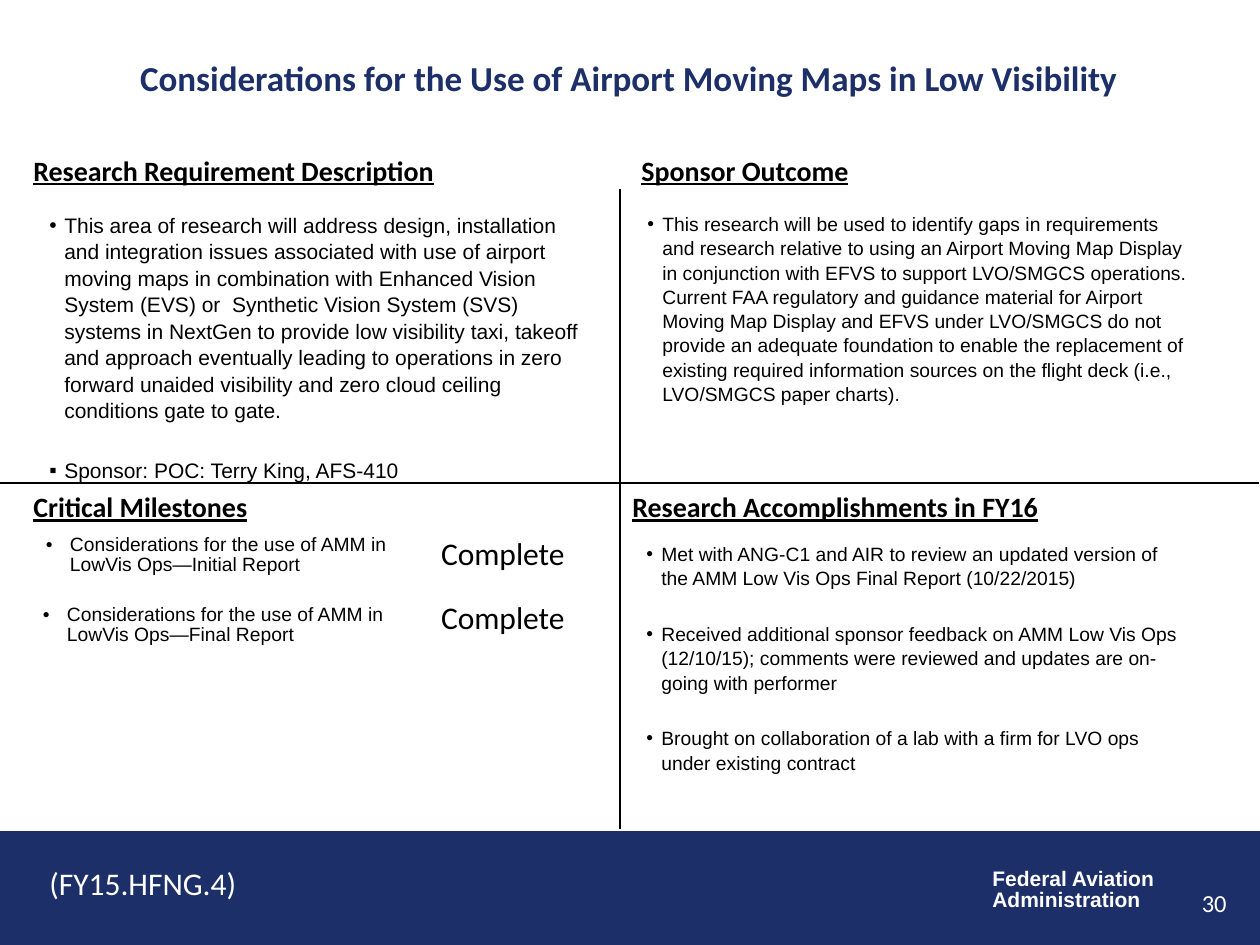
from dataclasses import dataclass
from typing import Optional

from lxml.etree import SubElement as Sub
from pptx import Presentation
from pptx.dml.color import RGBColor as Color
from pptx.enum.shapes import MSO_CONNECTOR as Link, MSO_SHAPE as Form
from pptx.enum.text import MSO_ANCHOR as Anchor, PP_ALIGN as Align
from pptx.oxml.ns import qn
from pptx.util import Emu, Pt

NAVY = Color(0x1D, 0x2F, 0x68)
BLACK = Color(0, 0, 0)
WHITE = Color(255, 255, 255)
SCALE = 914400 / 126


def px(n: int) -> Emu:
    return Emu(round(n * SCALE))


@dataclass
class Look:
    size: int
    face: str = "Arial"
    color: Color = BLACK
    bold: bool = False
    under: bool = False
    align: Align = Align.LEFT
    lead: Optional[float] = None
    gap: int = 0


@dataclass
class Box:
    x: int
    y: int
    w: int
    h: int
    lines: list[str]
    look: Look
    marks: str = ""
    wrap: bool = True
    anchor: Anchor = Anchor.TOP


HEAD = Look(16, "Calibri", bold=True, under=True)
BODY = Look(12, lead=1.05, gap=19)
SMALL = Look(11, lead=1.05, gap=18)
ITEM = Look(11, lead=0.95)
STATE = Look(11, bold=True, align=Align.CENTER)

BOXES = [
    Box(980, 863, 189, 55, ["Federal Aviation", "Administration"],
        Look(12, color=WHITE, bold=True, lead=0.85), wrap=False),
    Box(21, 483, 567, 48, ["Critical Milestones"], HEAD),
    Box(629, 147, 588, 48, ["Sponsor Outcome"], HEAD),
    Box(21, 147, 630, 73, ["Research Requirement Description"], HEAD),
    Box(620, 483, 557, 68, ["Research Accomplishments in FY16"], HEAD),
    Box(45, 19, 1168, 117,
        ["Considerations for the Use of Airport Moving Maps in Low Visibility"],
        Look(20, "Calibri", NAVY, bold=True, align=Align.CENTER),
        anchor=Anchor.MIDDLE),
    Box(945, 882, 294, 44, ["30"],
        Look(14, "Calibri", WHITE, align=Align.RIGHT)),
    Box(37, 205, 567, 277, [
        "This area of research will address design, installation and "
        "integration issues associated with use of airport moving maps in "
        "combination with Enhanced Vision System (EVS) or  Synthetic Vision "
        "System (SVS) systems in NextGen to provide low visibility taxi, "
        "takeoff and approach eventually leading to operations in zero forward "
        "unaided visibility and zero cloud ceiling conditions gate to gate.",
        "Sponsor: POC: Terry King, AFS-410"], BODY, "•▪"),
    Box(635, 205, 567, 277, [
        "This research will be used to identify gaps in requirements and "
        "research relative to using an Airport Moving Map Display in "
        "conjunction with EFVS to support LVO/SMGCS operations. Current FAA "
        "regulatory and guidance material for Airport Moving Map Display and "
        "EFVS under LVO/SMGCS do not provide an adequate foundation to enable "
        "the replacement of existing required information sources on the "
        "flight deck (i.e., LVO/SMGCS paper charts)."], SMALL, "•"),
    Box(634, 535, 567, 277, [
        "Met with ANG-C1 and AIR to review an updated version of the AMM Low "
        "Vis Ops Final Report (10/22/2015)",
        "Received additional sponsor feedback on AMM Low Vis Ops (12/10/15); "
        "comments were reviewed and updates are on-going with performer",
        "Brought on collaboration of a lab with a firm for LVO ops under "
        "existing contract"], SMALL, "•••"),
    Box(37, 858, 214, 50, ["(FY15.HFNG.4)"],
        Look(18, "Calibri", WHITE), wrap=False),
]


def style(para, look: Look, mark: str = "", hang: int = 15) -> None:
    para.alignment = look.align
    if look.lead:
        para.line_spacing = look.lead
    if mark:
        props = para._p.get_or_add_pPr()
        props.set("marL", str(px(hang)))
        props.set("indent", str(-px(hang)))
        Sub(props, qn("a:buFont")).set("typeface", "Arial")
        Sub(props, qn("a:buChar")).set("char", mark)
    font = para.font
    font.size, font.name = Pt(look.size), look.face
    font.bold, font.underline = look.bold, look.under
    font.color.rgb = look.color


def write(slide, box: Box) -> None:
    shape = slide.shapes.add_textbox(px(box.x), px(box.y), px(box.w), px(box.h))
    frame = shape.text_frame
    frame.word_wrap = box.wrap
    frame.vertical_anchor = box.anchor
    frame.text = "\n".join(box.lines)
    for i, para in enumerate(frame.paragraphs):
        style(para, box.look, box.marks[i:i + 1])
        if i and box.look.gap:
            para.space_before = Pt(box.look.gap)


def rule(slide, x1: int, y1: int, x2: int, y2: int) -> None:
    line = slide.shapes.add_connector(
        Link.STRAIGHT, px(x1), px(y1), px(x2), px(y2))
    line.line.color.rgb = BLACK
    line.line.width = Pt(0.75)
    Sub(line._element.spPr, qn("a:effectLst"))


def band(slide) -> None:
    bar = slide.shapes.add_shape(Form.RECTANGLE, 0, px(832), px(1260), px(112))
    bar.shadow.inherit = False
    bar.fill.solid()
    bar.fill.fore_color.rgb = NAVY
    bar.line.color.rgb = NAVY
    bar.line.width = Pt(0.75)


def pad(cell, side: int, top: int) -> None:
    cell.margin_left = cell.margin_right = px(side)
    cell.margin_top = cell.margin_bottom = px(top)


def grid(slide) -> None:
    cols, rows = [404, 147], [64, 57, 33]
    table = slide.shapes.add_table(
        3, 2, px(37), px(535), px(sum(cols)), px(sum(rows))).table
    table.first_row = table.horz_banding = False
    for col, wide in zip(table.columns, cols):
        col.width = px(wide)
    for row, high in zip(table.rows, rows):
        row.height = px(high)
    for cell in table.iter_cells():
        cell.fill.background()
        pad(cell, 0, 0)
        style(cell.text_frame.paragraphs[0], STATE)
    for i, (name, side, top) in enumerate([("Initial", 9, 0), ("Final", 6, 6)]):
        task, state = table.cell(i, 0), table.cell(i, 1)
        task.text = f"Considerations for the use of AMM in LowVis Ops—{name} Report"
        state.text = "Complete"
        pad(task, side, top)
        style(task.text_frame.paragraphs[0], ITEM, "•", 24)


def main() -> None:
    deck = Presentation()
    deck.slide_width, deck.slide_height = px(1260), px(945)
    slide = deck.slides.add_slide(deck.slide_layouts[6])
    band(slide)
    rule(slide, 620, 189, 620, 829)
    rule(slide, 0, 483, 1259, 483)
    for box in BOXES:
        write(slide, box)
    grid(slide)
    deck.save("out.pptx")


if __name__ == "__main__":
    main()
